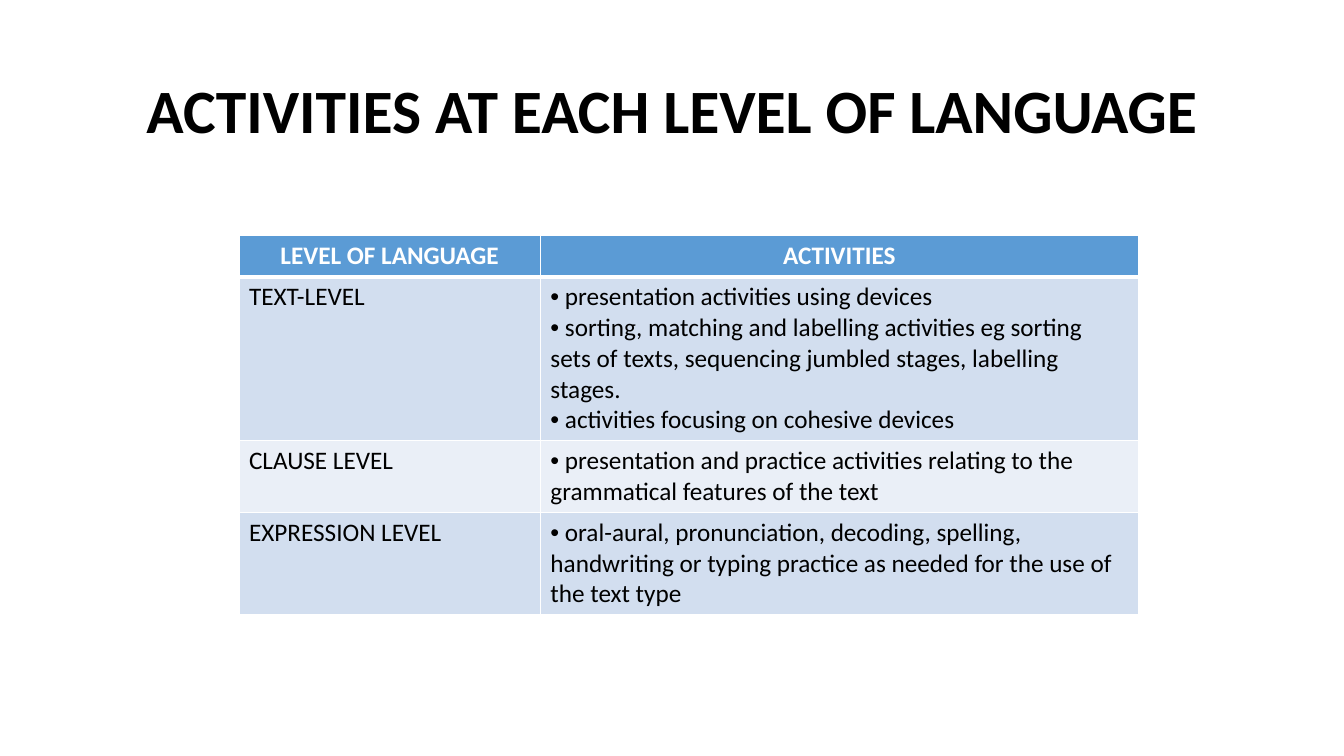
from dataclasses import dataclass

from lxml.etree import SubElement
from pptx import Presentation
from pptx.dml.color import RGBColor
from pptx.enum.text import MSO_ANCHOR, MSO_AUTO_SIZE, PP_ALIGN
from pptx.oxml.ns import qn
from pptx.util import Emu, Pt

EMU_PER_PX = 9144
FONT = "Calibri"
BLACK = "000000"
WHITE = "FFFFFF"
HEADER_BLUE = "5B9BD5"
BANDS = ("D2DEEF", "EAEFF7")
COLUMN_WIDTHS = (299, 593)


@dataclass(frozen=True)
class LevelRow:
    level: str
    activities: tuple[str, ...]
    height: int


HEADER = LevelRow("LEVEL OF LANGUAGE", ("ACTIVITIES",), 40)
LEVELS = (
    LevelRow(
        "TEXT-LEVEL",
        (
            "presentation activities using devices",
            "sorting, matching and labelling activities eg sorting sets of texts, "
            "sequencing jumbled stages, labelling stages.",
            "activities focusing on cohesive devices",
        ),
        160,
    ),
    LevelRow(
        "CLAUSE LEVEL",
        ("presentation and practice activities relating to the grammatical features of the text",),
        70,
    ),
    LevelRow(
        "EXPRESSION LEVEL",
        (
            "oral-aural, pronunciation, decoding, spelling, handwriting or typing "
            "practice as needed for the use of the text type",
        ),
        100,
    ),
)


def px(length: int) -> Emu:
    return Emu(length * EMU_PER_PX)


def rgb(color: str) -> RGBColor:
    return RGBColor.from_string(color)


def style_font(paragraph, size: int, color: str, bold: bool) -> None:
    font = paragraph.font
    font.name = FONT
    font.size = Pt(size)
    font.bold = bold
    font.color.rgb = rgb(color)


def add_bullet(paragraph) -> None:
    properties = paragraph._p.get_or_add_pPr()
    properties.set("marL", "0")
    properties.set("indent", "0")
    SubElement(properties, qn("a:buFont"), typeface="Arial")
    SubElement(properties, qn("a:buChar"), char="•")


def set_borders(cell, top: int, bottom: int) -> None:
    properties = cell._tc.get_or_add_tcPr()
    for side, points in (("L", 1), ("R", 1), ("T", top), ("B", bottom)):
        line = SubElement(properties, qn(f"a:ln{side}"), w=str(Pt(points)))
        fill = SubElement(line, qn("a:solidFill"))
        SubElement(fill, qn("a:srgbClr"), val=WHITE)


def fill_cell(cell, lines: tuple[str, ...], row_index: int, bulleted: bool) -> None:
    is_header = row_index == 0
    set_borders(cell, 3 if row_index == 1 else 1, 3 if is_header else 1)
    cell.fill.solid()
    cell.fill.fore_color.rgb = rgb(HEADER_BLUE if is_header else BANDS[(row_index - 1) % 2])
    cell.margin_left = cell.margin_right = px(10)
    cell.margin_top = cell.margin_bottom = px(5)
    frame = cell.text_frame
    for index, line in enumerate(lines):
        paragraph = frame.add_paragraph() if index else frame.paragraphs[0]
        paragraph.text = f" {line}" if bulleted else line
        paragraph.alignment = PP_ALIGN.CENTER if is_header else PP_ALIGN.LEFT
        if bulleted:
            add_bullet(paragraph)
        style_font(paragraph, 18, WHITE if is_header else BLACK, is_header)


def add_title(page) -> None:
    title = page.shapes.title
    title.left, title.top, title.width, title.height = map(px, (92, 40, 1150, 145))
    frame = title.text_frame
    frame.text = "ACTIVITIES AT EACH LEVEL OF LANGUAGE"
    frame.word_wrap = True
    frame.auto_size = MSO_AUTO_SIZE.NONE
    frame.vertical_anchor = MSO_ANCHOR.MIDDLE
    paragraph = frame.paragraphs[0]
    paragraph.alignment = PP_ALIGN.CENTER
    paragraph.line_spacing = 0.9
    style_font(paragraph, 44, BLACK, True)


def add_levels_table(page) -> None:
    rows = (HEADER, *LEVELS)
    width = sum(COLUMN_WIDTHS)
    height = sum(row.height for row in rows)
    table = page.shapes.add_table(
        len(rows), len(COLUMN_WIDTHS), px(237), px(234), px(width), px(height)
    ).table
    table.horz_banding = False
    for column, column_width in zip(table.columns, COLUMN_WIDTHS):
        column.width = px(column_width)
    for index, row in enumerate(rows):
        table.rows[index].height = px(row.height)
        fill_cell(table.cell(index, 0), (row.level,), index, False)
        fill_cell(table.cell(index, 1), row.activities, index, index > 0)


def main() -> None:
    deck = Presentation()
    deck.slide_width, deck.slide_height = px(1333), px(750)
    page = deck.slides.add_slide(deck.slide_layouts[5])
    add_title(page)
    add_levels_table(page)
    deck.save("out.pptx")


if __name__ == "__main__":
    main()
